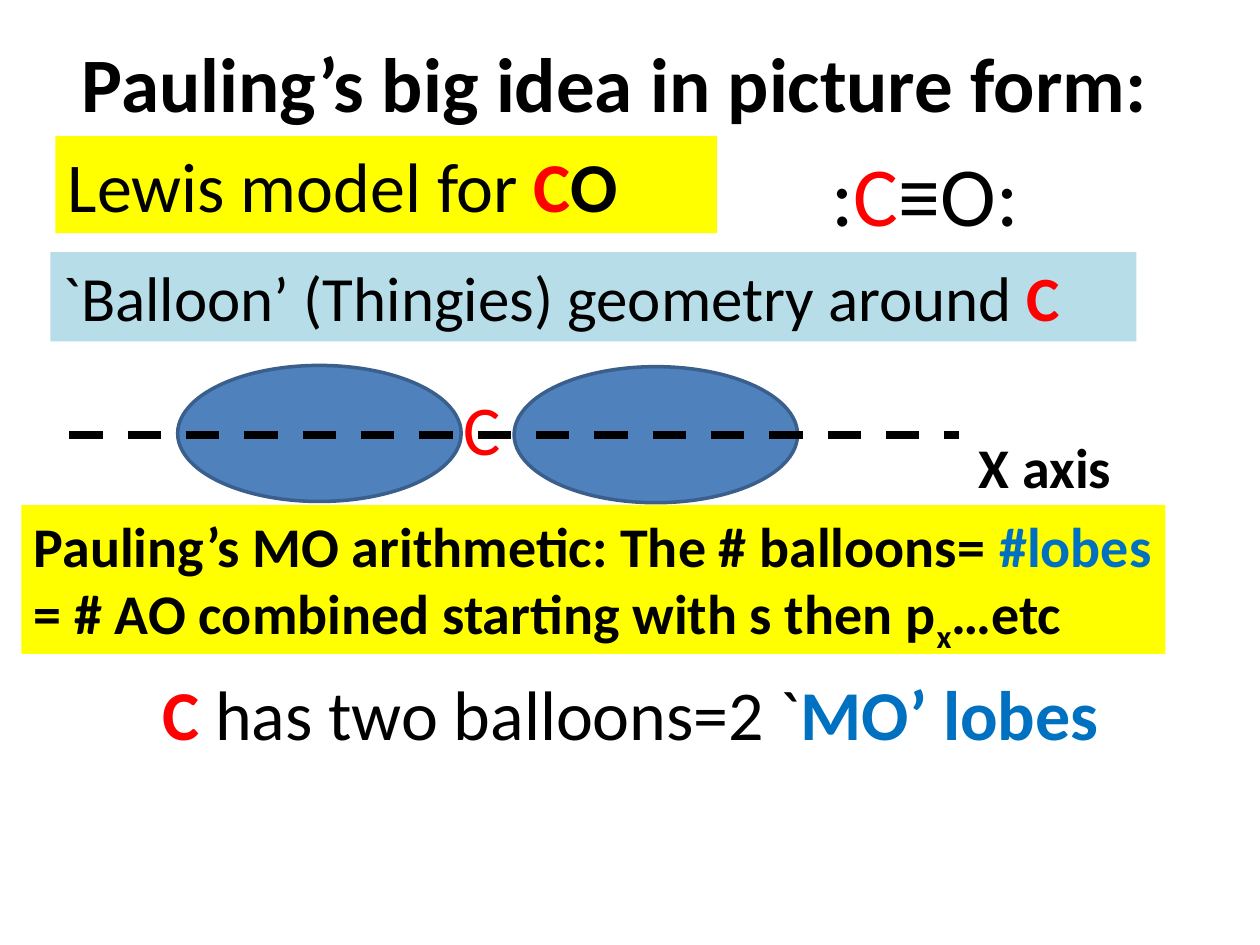
"""Build the slide on Pauling's balloon picture of carbon monoxide."""
from dataclasses import dataclass
from typing import NamedTuple, Optional

from lxml import etree
from pptx import Presentation
from pptx import util as u
from pptx.dml.color import RGBColor
from pptx.enum import dml, shapes, text
from pptx.oxml import ns


@dataclass(frozen=True)
class Theme:
    font: str = "Calibri"
    ink: str = "000000"
    carbon: str = "FF0000"
    lobe_word: str = "0070C0"
    highlight: str = "FFFF00"
    pale: str = "B7DEE8"
    balloon: str = "4F81BD"
    balloon_edge: str = "3A5F8C"
    title: int = 44
    formula: int = 48
    large: int = 40
    medium: int = 36
    small: int = 32
    edge_width: float = 2
    axis_width: float = 4.75


class Box(NamedTuple):
    col: float
    row: float
    cols: float
    rows: float


class Piece(NamedTuple):
    words: str
    color: str = "000000"
    bold: bool = False
    subscript: bool = False


class Label(NamedTuple):
    box: Box
    size: int
    pieces: tuple[Piece, ...]
    fill: Optional[str] = None


THEME = Theme()
WIDTH, HEIGHT = u.Inches(10), u.Inches(7.5)
COLUMNS, ROWS = 100, 75
AXIS_ROW = 34.5
BALLOONS = (Box(14.1, 29, 22.5, 10.8), Box(40.8, 29.1, 22.5, 10.8))
CARBON = Piece("C", THEME.carbon)
BOLD_CARBON = Piece("C", THEME.carbon, True)

TITLE = Label(Box(5.5, 2.3, 91.7, 8.4), THEME.title,
              (Piece("Pauling’s big idea in picture form:", bold=True),))
LABELS = (
    Label(Box(35.8, 30.1, 7, 7.7), THEME.large, (CARBON,)),
    Label(Box(4.4, 10.8, 52.5, 7.7), THEME.large,
          (Piece("Lewis model for "), BOLD_CARBON, Piece("O", bold=True)), THEME.highlight),
    Label(Box(65, 10.8, 23.3, 9.1), THEME.formula, (Piece(":"), CARBON, Piece("≡O:"))),
    Label(Box(4, 20, 86.2, 7.1), THEME.medium,
          (Piece("`Balloon’ (Thingies) geometry around "), BOLD_CARBON), THEME.pale),
    Label(Box(1.7, 40.1, 90.8, 11.8), THEME.small,
          (Piece("Pauling’s MO arithmetic: The # balloons= ", bold=True),
           Piece("#lobes ", THEME.lobe_word, True),
           Piece("= # AO combined starting with s then p", bold=True),
           Piece("x", bold=True, subscript=True),
           Piece("…etc", bold=True)), THEME.highlight),
)
CLOSING_LABELS = (
    Label(Box(76.7, 33.8, 15, 6.4), THEME.small, (Piece("X axis", bold=True),)),
    Label(Box(11.9, 52.7, 80.6, 7.7), THEME.large,
          (BOLD_CARBON, Piece(" has two balloons=2 `"),
           Piece("MO’ lobes", THEME.lobe_word, True))),
)


def x(col: float) -> int:
    return round(WIDTH * col / COLUMNS)


def y(row: float) -> int:
    return round(HEIGHT * row / ROWS)


def place(box: Box) -> tuple[int, int, int, int]:
    return x(box.col), y(box.row), x(box.cols), y(box.rows)


def draw_label(slide, label: Label) -> None:
    textbox = slide.shapes.add_textbox(*place(label.box))
    if label.fill:
        textbox.fill.solid()
        textbox.fill.fore_color.rgb = RGBColor.from_string(label.fill)
    frame = textbox.text_frame
    frame.word_wrap = True
    frame.auto_size = text.MSO_AUTO_SIZE.SHAPE_TO_FIT_TEXT
    for piece in label.pieces:
        run = frame.paragraphs[0].add_run()
        run.text = piece.words
        run.font.name = THEME.font
        run.font.size = u.Pt(label.size)
        run.font.bold = piece.bold
        run.font.color.rgb = RGBColor.from_string(piece.color)
        if piece.subscript:
            run._r.get_or_add_rPr().set("baseline", "-25000")


def draw_balloon(slide, box: Box) -> None:
    balloon = slide.shapes.add_shape(shapes.MSO_SHAPE.OVAL, *place(box))
    balloon.shadow.inherit = False
    balloon.fill.solid()
    balloon.fill.fore_color.rgb = RGBColor.from_string(THEME.balloon)
    balloon.line.color.rgb = RGBColor.from_string(THEME.balloon_edge)
    balloon.line.width = u.Pt(THEME.edge_width)


def draw_axis(slide, start: float, end: float, row: float) -> None:
    axis = slide.shapes.add_connector(
        shapes.MSO_CONNECTOR.STRAIGHT, x(start), y(row), x(end), y(row))
    axis.line.color.rgb = RGBColor.from_string(THEME.ink)
    axis.line.width = u.Pt(THEME.axis_width)
    axis.line.dash_style = dml.MSO_LINE.DASH
    etree.SubElement(axis._element.spPr, ns.qn("a:effectLst"))


def main() -> None:
    deck = Presentation()
    deck.slide_width, deck.slide_height = WIDTH, HEIGHT
    slide = deck.slides.add_slide(deck.slide_layouts[6])
    draw_label(slide, TITLE)
    for balloon in BALLOONS:
        draw_balloon(slide, balloon)
    for label in LABELS:
        draw_label(slide, label)
    draw_axis(slide, 5.5, 76.1, AXIS_ROW)
    for label in CLOSING_LABELS:
        draw_label(slide, label)
    deck.save("out.pptx")


if __name__ == "__main__":
    main()
